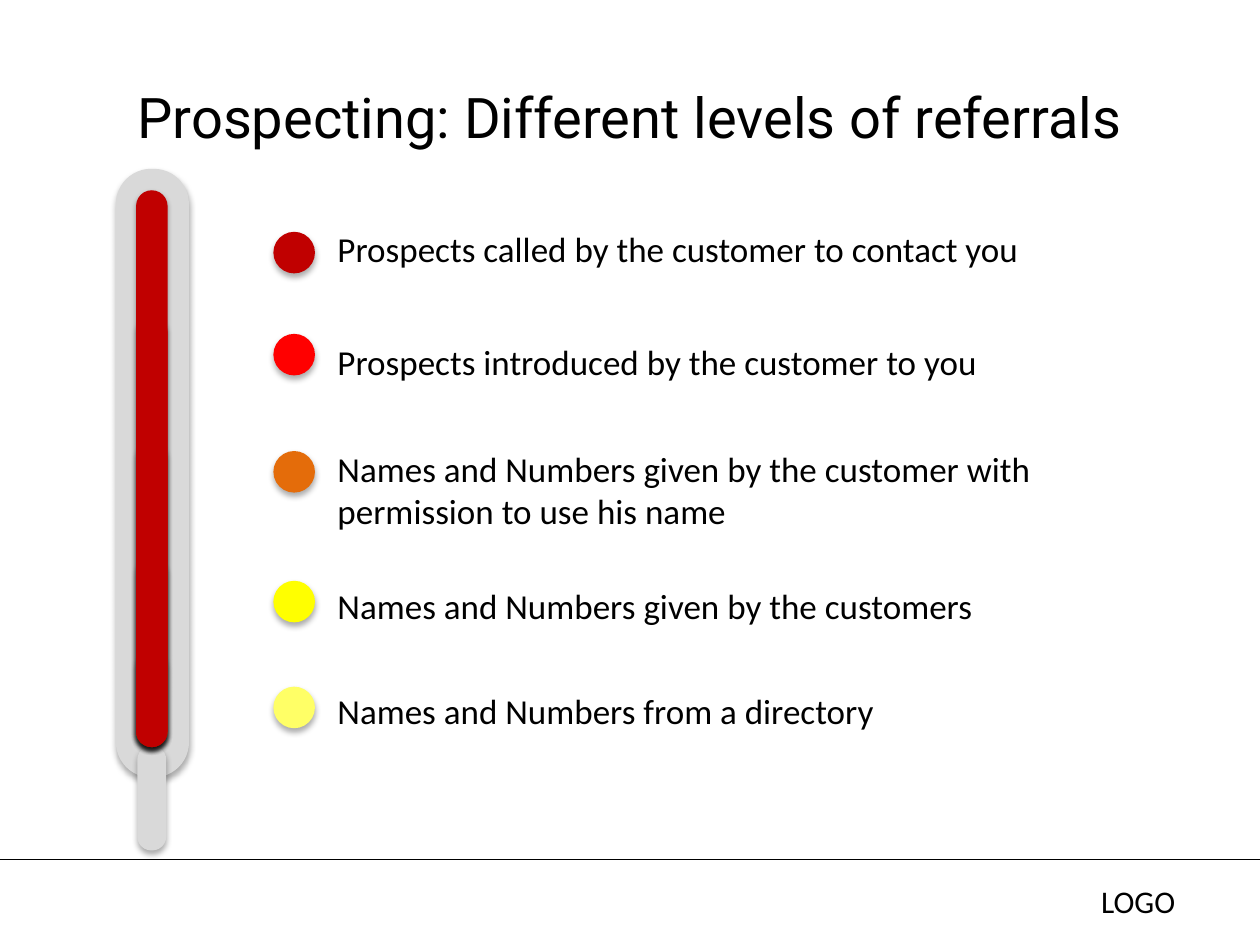
from lxml import etree
from pptx import Presentation
from pptx import util as u
from pptx.dml.color import RGBColor
from pptx.enum import shapes, text
from pptx.oxml import ns

SOFT = {"opacity": 32, "blur": 3.5, "distance": 2.2}
DENSE = {"opacity": 38, "blur": 3.1, "distance": 1.6}

# colour, dot top, text top, text width, text height, label; hottest first
LEVELS = [
    ("C00000", 1.84, 1.76, 6.68, 0.44, "Prospects called by the customer to contact you"),
    ("FF0000", 2.65, 2.65, 6.42, 0.44, "Prospects introduced by the customer to you"),
    ("E46C0A", 3.58, 3.5, 6.42, 0.77,
     "Names and Numbers given by the customer with permission to use his name"),
    ("FFFF00", 4.61, 4.59, 5.58, 0.44, "Names and Numbers given by the customers"),
    ("FFFF66", 5.45, 5.42, 4.5, 0.44, "Names and Numbers from a directory"),
]
BAR_BOTTOM = 5.93
BARS = [("FFFF99", 5.17), ("FFFF00", 4.42), ("E46C0A", 3.51), ("FF0000", 2.51), ("C00000", 1.51)]


def colour(value):
    return RGBColor.from_string(value)


def inches(values):
    return [u.Inches(value) for value in values]


def set_all(target, values):
    for name, value in values.items():
        setattr(target, name, value)


class SlideBuilder:
    ink = "000000"
    font = "Calibri"

    def __init__(self, page):
        self.page = page

    def group(self):
        return self.page.shapes.add_group_shape()

    def shape(self, parent, kind, at, fill, shadow, rounding=None):
        item = parent.shapes.add_shape(kind, *inches(at))
        if rounding is not None:
            item.adjustments[0] = rounding
        item.fill.solid()
        item.fill.fore_color.rgb = colour(fill)
        item.line.fill.background()
        self.shadow(item, **shadow)
        return item

    def shadow(self, item, opacity, blur, distance):
        """Give the shape a black shadow straight below it."""
        item.shadow.inherit = False
        effects = item._element.spPr.find(ns.qn("a:effectLst"))
        outer = etree.SubElement(
            effects, ns.qn("a:outerShdw"), blurRad=str(u.Pt(blur)),
            dist=str(u.Pt(distance)), dir="5400000", rotWithShape="0")
        tint = etree.SubElement(outer, ns.qn("a:srgbClr"), val=self.ink)
        etree.SubElement(tint, ns.qn("a:alpha"), val=str(opacity * 1000))

    def text(self, parent, at, words, size, font=None, frame_format=None, align=None):
        box = parent.shapes.add_textbox(*inches(at))
        set_all(box.text_frame, {"word_wrap": True, **(frame_format or {})})
        para = box.text_frame.paragraphs[0]
        para.alignment = align
        span = para.add_run()
        span.text = words
        set_all(span.font, {"name": font or self.font, "size": u.Pt(size)})
        span.font.color.rgb = colour(self.ink)
        return box

    def line(self, start, end, width):
        rule = self.page.shapes.add_connector(
            shapes.MSO_CONNECTOR.STRAIGHT, *inches(start + end))
        rule.line.width = u.Pt(width)
        rule.line.color.rgb = colour(self.ink)
        etree.SubElement(rule._element.spPr, ns.qn("a:effectLst"))
        return rule


def main():
    deck = Presentation()
    set_all(deck, {"slide_width": u.Inches(10), "slide_height": u.Inches(7.5)})
    page = deck.slides.add_slide(deck.slide_layouts[6])
    build = SlideBuilder(page)
    rounded, oval = shapes.MSO_SHAPE.ROUNDED_RECTANGLE, shapes.MSO_SHAPE.OVAL

    build.line((0, 6.82), (10, 6.82), 0.75)
    build.text(page, (8.64, 6.95, 1.11, 0.4), "LOGO", 18)

    thermometer = build.group()
    for at in ((0.92, 1.34, 0.58, 4.83), (1.09, 5.92, 0.23, 0.83)):
        build.shape(thermometer, rounded, at, "D9D9D9", SOFT, 0.48)

    for fill, top in BARS:
        build.shape(page, rounded, (1.08, top, 0.25, BAR_BOTTOM - top), fill, DENSE, 0.5)

    for fill, dot_top, text_top, width, height, label in LEVELS:
        row = build.group()
        build.text(row, (2.58, text_top, width, height), label, 20)
        build.shape(row, oval, (2.17, dot_top, 0.33, 0.33), fill, SOFT)

    build.text(page, (0.5, 0.3, 9, 1.25), "Prospecting: Different levels of referrals", 32,
               font="Roboto", align=text.PP_ALIGN.CENTER,
               frame_format={"vertical_anchor": text.MSO_ANCHOR.MIDDLE})
    deck.save("out.pptx")


if __name__ == "__main__":
    main()
